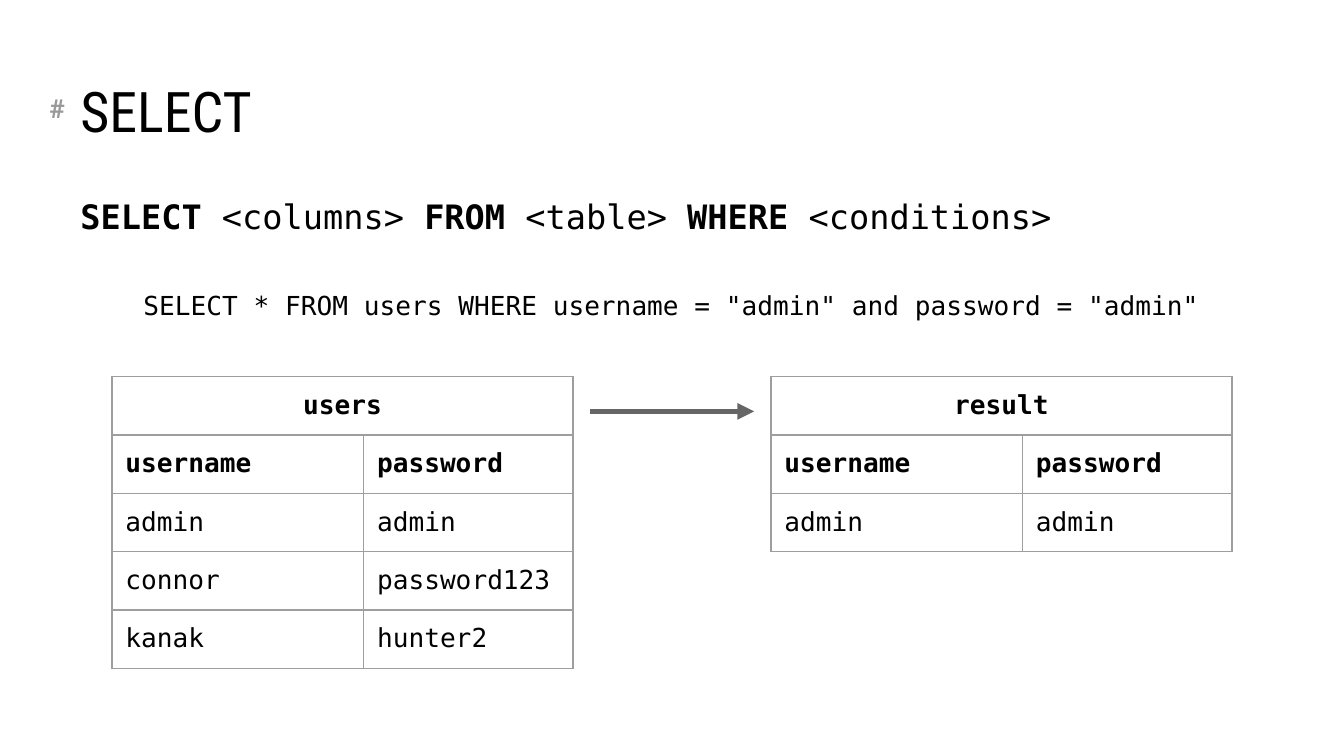
from dataclasses import dataclass

from lxml import etree
from pptx import Presentation
from pptx.dml.color import RGBColor
from pptx.enum.shapes import MSO_CONNECTOR
from pptx.enum.text import MSO_ANCHOR, PP_ALIGN
from pptx.oxml.ns import qn
from pptx.util import Pt

STRAIGHT = MSO_CONNECTOR.STRAIGHT
TOP, BOTTOM = MSO_ANCHOR.TOP, MSO_ANCHOR.BOTTOM
LEFT, CENTER = PP_ALIGN.LEFT, PP_ALIGN.CENTER


@dataclass(frozen=True)
class Theme:
    ink: str = "000000"
    muted: str = "999999"
    border: str = "9E9E9E"
    arrow: str = "666666"
    paper: str = "FFFFFF"
    code_font: str = "DejaVu Sans Mono"
    title_font: str = "Roboto Condensed"
    mark_font: str = "Roboto"
    title_size: float = 30
    syntax_size: float = 18
    code_size: float = 14
    inset: float = 7.2


THEME = Theme()

# Content: spans are (text, bold)
MARK = [("#", True)]
TITLE = [("SELECT", False)]
SYNTAX = [
    ("SELECT", True), (" <columns> ", False),
    ("FROM", True), (" <table> ", False),
    ("WHERE", True), (" <conditions>", False),
]
QUERY = [('SELECT * FROM users WHERE username = "admin" and password = "admin"', False)]
FIELDS = ("username", "password")
USERS = [("admin", "admin"), ("connor", "password123"), ("kanak", "hunter2")]
RESULT = USERS[:1]

# Layout in points
PAGE_WIDTH, PAGE_HEIGHT = 720, 405
MARGIN = 36
CONTENT_WIDTH = PAGE_WIDTH - 2 * MARGIN
COLUMN_WIDTHS = (134.8, 112.2)
ROW_HEIGHT = 31
TABLE_TOP = 201.8
USERS_LEFT = 60
RESULT_LEFT = PAGE_WIDTH - USERS_LEFT - sum(COLUMN_WIDTHS)
ARROW_GAP = 9
ARROW_TOP = 220.4


def style_span(span, font, size, color, bold):
    span.font.name = font
    span.font.size = Pt(size)
    span.font.bold = bold
    span.font.color.rgb = RGBColor.from_string(color)


def add_text(page, spans, left, top, width, height, font, size,
             color=THEME.ink, align=LEFT, anchor=TOP, spacing=1.0):
    box = page.shapes.add_textbox(Pt(left), Pt(top), Pt(width), Pt(height))
    frame = box.text_frame
    frame.word_wrap = True
    frame.vertical_anchor = anchor
    frame.margin_left = frame.margin_right = Pt(THEME.inset)
    frame.margin_top = frame.margin_bottom = Pt(THEME.inset)
    para = frame.paragraphs[0]
    para.alignment = align
    para.line_spacing = spacing
    for text, bold in spans:
        span = para.add_run()
        span.text = text
        style_span(span, font, size, color, bold)
    return box


def add_borders(cell):
    properties = cell._tc.get_or_add_tcPr()
    for position, side in enumerate(("lnL", "lnR", "lnT", "lnB")):
        line = etree.Element(qn(f"a:{side}"), w=str(Pt(0.75)))
        fill = etree.SubElement(line, qn("a:solidFill"))
        etree.SubElement(fill, qn("a:srgbClr"), val=THEME.border)
        properties.insert(position, line)


def add_data_table(page, name, records, left):
    rows = [(name, ""), FIELDS, *records]
    frame = page.shapes.add_table(
        len(rows), len(FIELDS), Pt(left), Pt(TABLE_TOP),
        Pt(sum(COLUMN_WIDTHS)), Pt(ROW_HEIGHT * len(rows)))
    table = frame.table
    table.first_row = table.horz_banding = False
    for column, width in zip(table.columns, COLUMN_WIDTHS):
        column.width = Pt(width)
    for row_index, values in enumerate(rows):
        table.rows[row_index].height = Pt(ROW_HEIGHT)
        for column_index, value in enumerate(values):
            cell = table.cell(row_index, column_index)
            cell.margin_left = cell.margin_right = Pt(THEME.inset)
            cell.margin_top = cell.margin_bottom = Pt(THEME.inset)
            cell.fill.background()
            add_borders(cell)
            para = cell.text_frame.paragraphs[0]
            para.text = value
            para.alignment = CENTER if row_index == 0 else LEFT
            for span in para.runs:
                style_span(span, THEME.code_font, THEME.code_size,
                           THEME.ink, row_index < 2)
    table.cell(0, 0).merge(table.cell(0, 1))


def add_arrow(page, start, end, top):
    arrow = page.shapes.add_connector(STRAIGHT, Pt(start), Pt(top), Pt(end), Pt(top))
    arrow.line.color.rgb = RGBColor.from_string(THEME.arrow)
    arrow.line.width = Pt(3)
    etree.SubElement(arrow.line._get_or_add_ln(), qn("a:tailEnd"), type="triangle")
    etree.SubElement(arrow._element.spPr, qn("a:effectLst"))


def main():
    deck = Presentation()
    deck.slide_width, deck.slide_height = Pt(PAGE_WIDTH), Pt(PAGE_HEIGHT)
    page = deck.slides.add_slide(deck.slide_layouts[6])
    page.background.fill.solid()
    page.background.fill.fore_color.rgb = RGBColor.from_string(THEME.paper)

    # Heading
    add_text(page, MARK, 19.4, 42.5, 22.3, 33.8, THEME.mark_font,
             THEME.code_size, color=THEME.muted)
    add_text(page, TITLE, MARGIN, 16.6, CONTENT_WIDTH, 67.7, THEME.title_font,
             THEME.title_size, anchor=BOTTOM)

    # Syntax and example query
    add_text(page, SYNTAX, MARGIN, 94.3, CONTENT_WIDTH, 293, THEME.code_font,
             THEME.syntax_size, spacing=1.15)
    add_text(page, QUERY, MARGIN, 147.6, CONTENT_WIDTH, 31.7, THEME.code_font,
             THEME.code_size, align=CENTER)

    # Source table, arrow, result table
    add_data_table(page, "users", USERS, USERS_LEFT)
    add_arrow(page, USERS_LEFT + sum(COLUMN_WIDTHS) + ARROW_GAP,
              RESULT_LEFT - ARROW_GAP, ARROW_TOP)
    add_data_table(page, "result", RESULT, RESULT_LEFT)

    deck.save("out.pptx")


if __name__ == "__main__":
    main()
